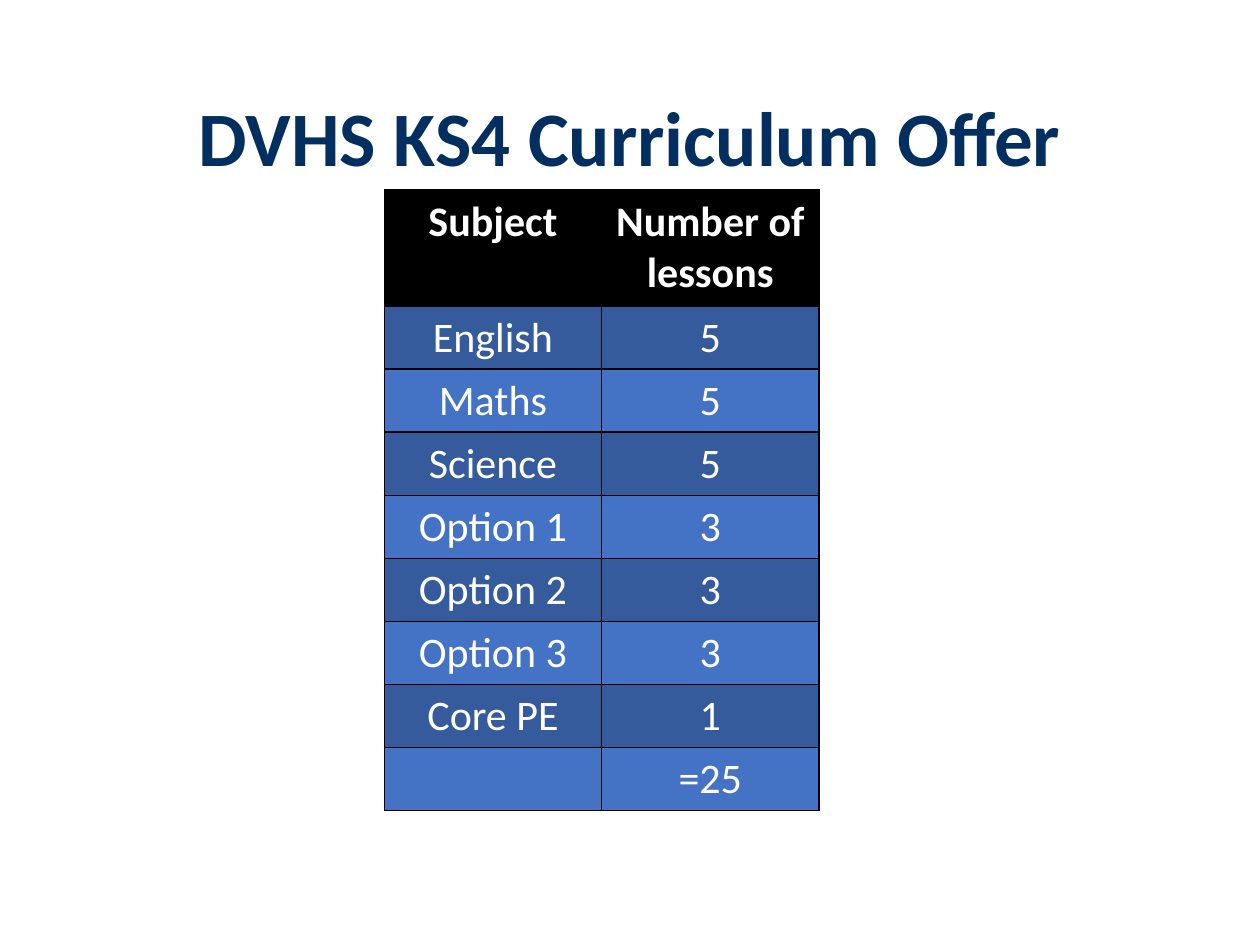
"""Build the DVHS KS4 curriculum offer slide."""
from dataclasses import dataclass

from lxml.etree import SubElement
from pptx import Presentation
from pptx.dml.color import RGBColor
from pptx.enum.text import MSO_ANCHOR, PP_ALIGN
from pptx.oxml.ns import qn
from pptx.util import Inches, Pt

TITLE = "DVHS KS4 Curriculum Offer"
HEADER = ("Subject", "Number of lessons")
LESSONS = [
    ("English", "5"),
    ("Maths", "5"),
    ("Science", "5"),
    ("Option 1", "3"),
    ("Option 2", "3"),
    ("Option 3", "3"),
    ("Core PE", "1"),
    ("", "=25"),
]


@dataclass(frozen=True)
class Theme:
    font: str = "Calibri"
    title_size: int = 44
    table_size: int = 24
    title: str = "032F60"
    text: str = "FFFFFF"
    header: str = "000000"
    bands: tuple = ("365B9D", "4472C4")
    border: str = "000000"
    border_width: int = 1


THEME = Theme()


def write(frame, text, size, color, bold):
    para = frame.paragraphs[0]
    para.alignment = PP_ALIGN.CENTER
    span = para.add_run()
    span.text = text
    font_format = {"name": THEME.font, "size": Pt(size), "bold": bold}
    for name, value in font_format.items():
        setattr(span.font, name, value)
    span.font.color.rgb = RGBColor.from_string(color)
    return para


def add_borders(cell):
    properties = cell._tc.get_or_add_tcPr()
    for index, side in enumerate(("lnL", "lnR", "lnT", "lnB")):
        line = properties.makeelement(qn(f"a:{side}"), {"w": str(Pt(THEME.border_width))})
        fill = SubElement(line, qn("a:solidFill"))
        SubElement(fill, qn("a:srgbClr"), val=THEME.border)
        properties.insert(index, line)


def add_title(page):
    box = page.shapes.add_textbox(Inches(0.69), Inches(0.4), Inches(8.62), Inches(1.45))
    frame_format = {"word_wrap": True, "vertical_anchor": MSO_ANCHOR.MIDDLE}
    for name, value in frame_format.items():
        setattr(box.text_frame, name, value)
    para = write(box.text_frame, TITLE, THEME.title_size, THEME.title, True)
    para.line_spacing = 0.9


def add_lessons(page):
    rows = [HEADER, *LESSONS]
    table = page.shapes.add_table(
        len(rows), len(HEADER), Inches(3.05), Inches(1.51), Inches(3.45), Inches(4.92)
    ).table
    for row_index, values in enumerate(rows):
        is_header = row_index == 0
        table.rows[row_index].height = Inches(0.92 if is_header else 0.5)
        color = THEME.header if is_header else THEME.bands[(row_index - 1) % 2]
        for column_index, text in enumerate(values):
            cell = table.cell(row_index, column_index)
            cell.fill.solid()
            cell.fill.fore_color.rgb = RGBColor.from_string(color)
            add_borders(cell)
            if text:
                write(cell.text_frame, text, THEME.table_size, THEME.text, is_header)


def main():
    deck = Presentation()
    deck.slide_width, deck.slide_height = Inches(10), Inches(7.5)
    page = deck.slides.add_slide(deck.slide_layouts[6])
    add_title(page)
    add_lessons(page)
    deck.save("out.pptx")


if __name__ == "__main__":
    main()
